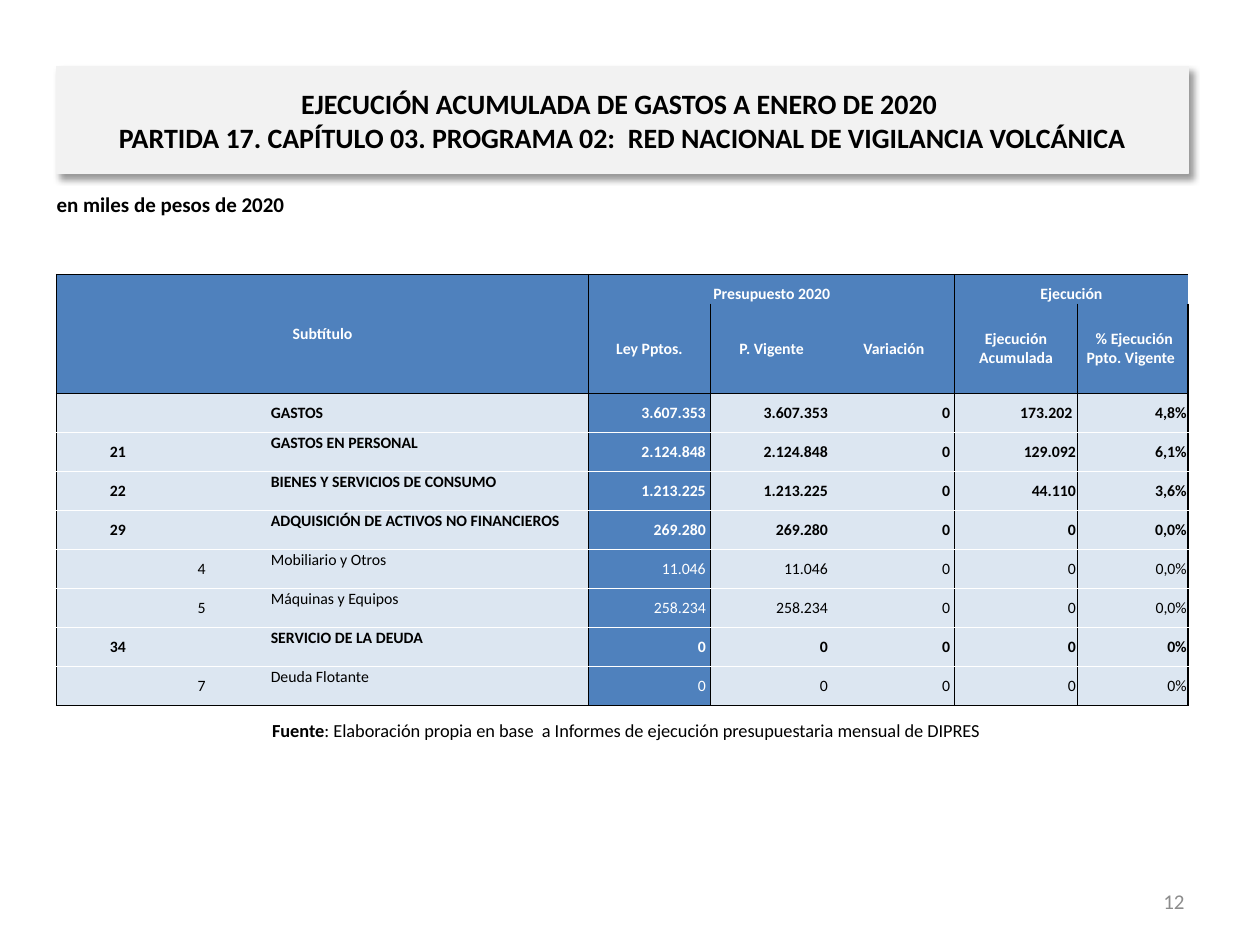
from dataclasses import dataclass

from lxml.etree import SubElement
from pptx import Presentation
from pptx.dml.color import RGBColor
from pptx.enum.shapes import MSO_SHAPE
from pptx.enum.text import MSO_ANCHOR, PP_ALIGN
from pptx.oxml.ns import qn
from pptx.util import Inches, Pt

COLORS = {
    "black": "000000",
    "white": "FFFFFF",
    "blue": "4F81BD",
    "pale": "DCE6F1",
    "panel": "F2F2F2",
    "gray": "8C8C8C",
}
FONT = "Calibri"
PLAIN_TABLE_STYLE = "{2D5ABB26-0587-4C30-8999-92F81FD0307C}"

COLUMN_WIDTHS = [0.97, 0.36, 0.36, 2.53, 0.97, 0.97, 0.97, 0.97, 0.88]
HEADER_HEIGHTS = [0.23, 0.71]
BODY_HEIGHT = 0.31
NAME_COLUMN, LAW_COLUMN = 3, 4


@dataclass(frozen=True)
class Heading:
    text: str
    row: int
    column: int
    last_row: int
    last_column: int
    anchor: MSO_ANCHOR = MSO_ANCHOR.MIDDLE


@dataclass(frozen=True)
class Expense:
    subtitle: str
    item: str
    name: str
    law: str
    executed: str
    percent: str

    @property
    def bold(self) -> bool:
        return not self.item

    def texts(self) -> list[str]:
        return [self.subtitle, self.item, "", self.name,
                f"{self.law} ", f"{self.law} ", "0 ", self.executed, self.percent]


HEADINGS = [
    Heading("Subtítulo", 0, 0, 1, 3),
    Heading("Presupuesto 2020", 0, 4, 0, 6, MSO_ANCHOR.BOTTOM),
    Heading("Ejecución", 0, 7, 0, 8, MSO_ANCHOR.BOTTOM),
    Heading("Ley Pptos.", 1, 4, 1, 4),
    Heading("P. Vigente", 1, 5, 1, 5),
    Heading("Variación", 1, 6, 1, 6),
    Heading("Ejecución Acumulada", 1, 7, 1, 7),
    Heading(" % Ejecución Ppto. Vigente ", 1, 8, 1, 8),
]
EXPENSES = [
    Expense("", "", "GASTOS", "3.607.353", "173.202 ", "4,8%"),
    Expense("21", "", "GASTOS EN PERSONAL", "2.124.848", "129.092", "6,1%"),
    Expense("22", "", "BIENES Y SERVICIOS DE CONSUMO", "1.213.225", "44.110", "3,6%"),
    Expense("29", "", "ADQUISICIÓN DE ACTIVOS NO FINANCIEROS", "269.280", "0", "0,0%"),
    Expense("", "4", "Mobiliario y Otros", "11.046", "0", "0,0%"),
    Expense("", "5", "Máquinas y Equipos", "258.234", "0", "0,0%"),
    Expense("34", "", "SERVICIO DE LA DEUDA", "0", "0", "0%"),
    Expense("", "7", "Deuda Flotante", "0", "0", "0%"),
]

# Edge number -> (colour, width in points)
VERTICAL_EDGES = {0: ("black", 1), 4: ("black", 0.5), 7: ("black", 0.5), 9: ("black", 1)}
HORIZONTAL_EDGES = {edge: ("white", 0.5) for edge in range(3, 10)}
HORIZONTAL_EDGES |= {0: ("black", 1), 2: ("black", 0.5), 10: ("black", 1)}


def rgb(name: str) -> RGBColor:
    return RGBColor.from_string(COLORS[name])


def write(frame, text: str, *, size: float, color: str = "black", bold: bool = False,
          lead: str = "", align: PP_ALIGN = PP_ALIGN.LEFT) -> None:
    """Fill a frame; lead is a bold opening, and a newline is a line break."""
    para = frame.paragraphs[0]
    para.alignment = align
    if not text:
        para._p.get_or_add_endParaRPr().set("sz", str(int(size * 100)))
    parts = [(lead, True)] if lead else []
    for number, line in enumerate(text.split("\n") if text else []):
        parts += [("\n", bold)] if number else []
        parts.append((line, bold))
    for words, heavy in parts:
        if words == "\n":
            para.add_line_break()
            continue
        span = para.add_run()
        span.text = words
        span.font.name = FONT
        span.font.size = Pt(size)
        span.font.bold = heavy
        span.font.color.rgb = rgb(color)


def add_label(page, left: float, top: float, width: float, height: float, text: str,
              *, anchor: MSO_ANCHOR = MSO_ANCHOR.MIDDLE, **text_format) -> None:
    box = page.shapes.add_textbox(Inches(left), Inches(top), Inches(width), Inches(height))
    box.text_frame.word_wrap = True
    box.text_frame.vertical_anchor = anchor
    write(box.text_frame, text, **text_format)


def add_title(page, text: str) -> None:
    panel = page.shapes.add_shape(MSO_SHAPE.RECTANGLE, Inches(0.45), Inches(0.53),
                                  Inches(8.98), Inches(0.85))
    panel.fill.solid()
    panel.fill.fore_color.rgb = rgb("panel")
    panel.line.color.rgb = rgb("panel")
    panel.line.width = Pt(0.75)
    panel.shadow.inherit = False
    effects = panel._element.spPr.find(qn("a:effectLst"))
    shadow = SubElement(effects, qn("a:outerShdw"), blurRad=str(Pt(4)), dist=str(Pt(3)),
                        dir=str(45 * 60000), algn="tl", rotWithShape="0")
    tint = SubElement(shadow, qn("a:srgbClr"), val=COLORS["black"])
    SubElement(tint, qn("a:alpha"), val="40000")
    panel.text_frame.word_wrap = True
    panel.text_frame.vertical_anchor = MSO_ANCHOR.MIDDLE
    write(panel.text_frame, text, size=16, bold=True, align=PP_ALIGN.CENTER)


def style_cell(cell, row: int, column: int) -> None:
    """Set margins, borders and fill from the place of the cell in the grid."""
    cell.margin_left = cell.margin_right = cell.margin_top = Inches(0.01)
    cell.margin_bottom = 0
    properties = cell._tc.get_or_add_tcPr()
    edges = {
        "a:lnL": VERTICAL_EDGES.get(column),
        "a:lnR": VERTICAL_EDGES.get(column + 1),
        "a:lnT": HORIZONTAL_EDGES.get(row),
        "a:lnB": HORIZONTAL_EDGES.get(row + 1),
    }
    for tag, edge in edges.items():
        if edge:
            color, width = edge
            line = SubElement(properties, qn(tag), w=str(Pt(width)))
            fill = SubElement(line, qn("a:solidFill"))
            SubElement(fill, qn("a:srgbClr"), val=COLORS[color])
    is_blue = row < len(HEADER_HEIGHTS) or column == LAW_COLUMN
    cell.fill.solid()
    cell.fill.fore_color.rgb = rgb("blue" if is_blue else "pale")


def add_budget_table(page) -> None:
    heights = HEADER_HEIGHTS + [BODY_HEIGHT] * len(EXPENSES)
    frame = page.shapes.add_table(len(heights), len(COLUMN_WIDTHS), Inches(0.45), Inches(2.18),
                                  Inches(sum(COLUMN_WIDTHS)), Inches(sum(heights)))
    table = frame.table
    table.first_row = table.horz_banding = False
    table._tbl.tblPr.find(qn("a:tableStyleId")).text = PLAIN_TABLE_STYLE
    for column, width in enumerate(COLUMN_WIDTHS):
        table.columns[column].width = Inches(width)
    for row, height in enumerate(heights):
        table.rows[row].height = Inches(height)
        for column in range(len(COLUMN_WIDTHS)):
            style_cell(table.cell(row, column), row, column)

    for heading in HEADINGS:
        cell = table.cell(heading.row, heading.column)
        last = table.cell(heading.last_row, heading.last_column)
        if cell != last:
            cell.merge(last)
        cell.vertical_anchor = heading.anchor
        write(cell.text_frame, heading.text, size=9, color="white", bold=True,
              align=PP_ALIGN.CENTER)

    for row, expense in enumerate(EXPENSES, start=len(HEADER_HEIGHTS)):
        for column, text in enumerate(expense.texts()):
            cell = table.cell(row, column)
            raised = column == NAME_COLUMN and row > len(HEADER_HEIGHTS)
            cell.vertical_anchor = MSO_ANCHOR.TOP if raised else MSO_ANCHOR.MIDDLE
            if column == NAME_COLUMN:
                align = PP_ALIGN.JUSTIFY
            else:
                align = PP_ALIGN.CENTER if column < NAME_COLUMN else PP_ALIGN.RIGHT
            write(cell.text_frame, text, size=9, bold=expense.bold, align=align,
                  color="white" if column == LAW_COLUMN else "black")


def main() -> None:
    deck = Presentation()
    deck.slide_width, deck.slide_height = Inches(10), Inches(7.5)
    page = deck.slides.add_slide(deck.slide_layouts[6])
    add_label(page, 0.48, 5.64, 8.98, 0.31,
              ": Elaboración propia en base  a Informes de ejecución presupuestaria "
              "mensual de DIPRES",
              lead="Fuente", size=10.5, align=PP_ALIGN.CENTER)
    add_label(page, 7.17, 6.95, 2.33, 0.4, "12", size=12, color="gray", align=PP_ALIGN.RIGHT)
    add_label(page, 0.35, 1.47, 8.19, 0.39, "en miles de pesos de 2020",
              anchor=MSO_ANCHOR.TOP, size=12, bold=True)
    add_title(page, "EJECUCIÓN ACUMULADA DE GASTOS A ENERO DE 2020 \n"
                    "PARTIDA 17. CAPÍTULO 03. PROGRAMA 02:  RED NACIONAL DE VIGILANCIA VOLCÁNICA")
    add_budget_table(page)
    deck.save("out.pptx")


if __name__ == "__main__":
    main()
